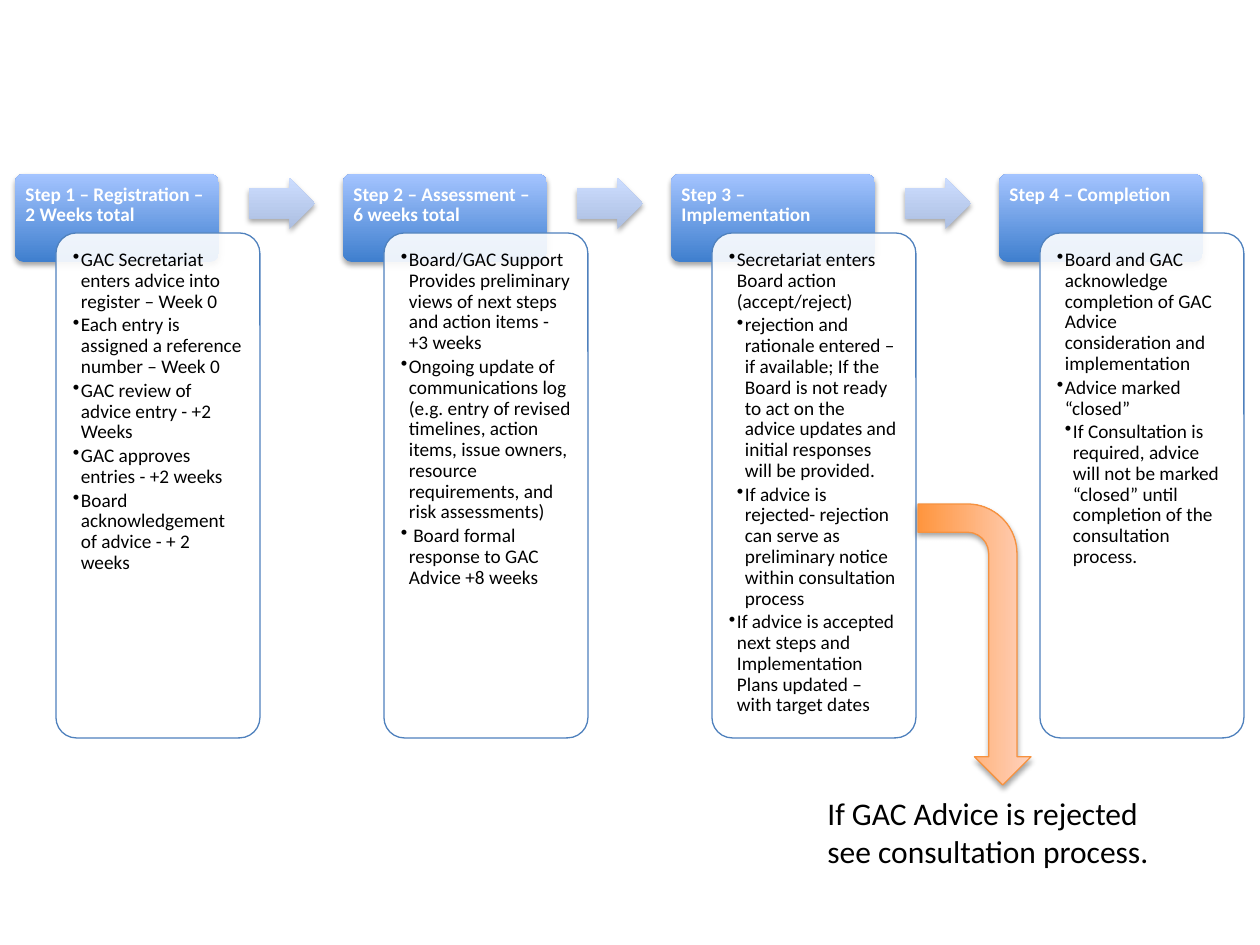
from lxml import etree
from pptx import Presentation
from pptx.dml.color import RGBColor
from pptx.enum.shapes import MSO_SHAPE
from pptx.enum.text import MSO_ANCHOR, PP_ALIGN
from pptx.oxml.ns import qn
from pptx.util import Emu, Pt

ROUNDED = MSO_SHAPE.ROUNDED_RECTANGLE
RIGHT_ARROW = MSO_SHAPE.RIGHT_ARROW
BENT_ARROW = MSO_SHAPE.BENT_ARROW
TOP = MSO_ANCHOR.TOP
LEFT = PP_ALIGN.LEFT

WHITE = RGBColor(0xFF, 0xFF, 0xFF)
BLACK = RGBColor(0x00, 0x00, 0x00)
BLUE_LINE = RGBColor(0x4F, 0x81, 0xBD)
ORANGE_LINE = RGBColor(0xF6, 0x92, 0x40)
HEADER_FILL = (RGBColor(0x3F, 0x7F, 0xCE), RGBColor(0xA4, 0xC4, 0xFF))
ARROW_FILL = (RGBColor(0xAD, 0xBF, 0xE1), RGBColor(0xCC, 0xDD, 0xFF))
ORANGE_FILL = (RGBColor(0xFF, 0x95, 0x3E), RGBColor(0xFF, 0xD2, 0xBD))
FONT = "Calibri"

STEPS = [
    ("Step 1 – Registration – 2 Weeks total", [
        (1, "GAC Secretariat enters advice into register – Week 0"),
        (1, "Each entry is assigned a reference number – Week 0"),
        (1, "GAC review of advice entry - +2 Weeks"),
        (1, "GAC approves entries - +2 weeks"),
        (1, "Board acknowledgement of advice - + 2 weeks"),
    ]),
    ("Step 2 – Assessment – 6 weeks total", [
        (1, "Board/GAC Support Provides preliminary views of next steps and "
            "action items - +3 weeks"),
        (1, "Ongoing update of communications log (e.g. entry of revised "
            "timelines, action items, issue owners, resource requirements, "
            "and risk assessments)"),
        (1, " Board formal response to GAC Advice +8 weeks"),
    ]),
    ("Step 3 – Implementation", [
        (1, "Secretariat enters Board action (accept/reject)"),
        (2, "rejection and rationale entered – if available; If the Board is "
            "not ready to act on the advice updates and initial responses "
            "will be provided."),
        (2, "If advice is rejected- rejection can serve as preliminary notice "
            "within consultation process"),
        (1, "If advice is accepted next steps and Implementation Plans "
            "updated – with target dates"),
    ]),
    ("Step 4 – Completion", [
        (1, "Board and GAC acknowledge completion of GAC Advice consideration "
            "and implementation"),
        (1, "Advice marked “closed”"),
        (2, "If Consultation is required, advice will not be marked “closed” "
            "until completion of the consultation process."),
    ]),
]
NOTE = "If GAC Advice is rejected see consultation process."

SCALE = 914400 / 126
FIRST_LEFT, STEP_PITCH = 15, 328
HEADER_TOP, HEADER_HEIGHT, CARD_WIDTH = 174, 88, 204
BODY_SHIFT, BODY_TOP, BODY_HEIGHT = 41, 233, 505
ARROW_SHIFT, ARROW_TOP, ARROW_WIDTH, ARROW_HEIGHT = 234, 178, 66, 51
BULLET_INDENT = 8


def px(value):
    return Emu(round(value * SCALE))


def add_box(page, kind, bounds, adjustments=()):
    box = page.shapes.add_shape(kind, *map(px, bounds))
    for index, value in enumerate(adjustments):
        box.adjustments[index] = value
    box.shadow.inherit = False
    box.line.fill.background()
    return box


def set_outline(box, color):
    box.line.color.rgb = color
    box.line.width = Pt(0.75)


def set_raised_fill(box, colors):
    box.fill.gradient()
    box.fill.gradient_angle = 90
    for stop, color in zip(box.fill.gradient_stops, colors):
        stop.color.rgb = color
    effects = box.element.spPr.find(qn("a:effectLst"))
    shadow = etree.SubElement(effects, qn("a:outerShdw"), blurRad=str(Pt(3.1)),
                              dist=str(Pt(1.8)), dir="5400000", rotWithShape="0")
    shade = etree.SubElement(shadow, qn("a:srgbClr"), val=str(BLACK))
    etree.SubElement(shade, qn("a:alpha"), val="35000")


def set_translucent_fill(box, color, percent):
    box.fill.solid()
    box.fill.fore_color.rgb = color
    shade = box.element.spPr.find(qn("a:solidFill"))[0]
    etree.SubElement(shade, qn("a:alpha"), val=str(percent * 1000))


def write_text(box, items, size=11, color=BLACK, bold=False, spacing=None,
               after=None, margins=None):
    frame = box.text_frame
    frame.word_wrap = True
    frame.vertical_anchor = TOP
    if margins:
        (frame.margin_left, frame.margin_top,
         frame.margin_right, frame.margin_bottom) = map(px, margins)
    for index, (level, text) in enumerate(items):
        para = frame.add_paragraph() if index else frame.paragraphs[0]
        para.alignment = LEFT
        para.level = level
        para.line_spacing = spacing
        para.space_after = after
        if level:
            properties = para._p.get_or_add_pPr()
            properties.set("marL", str(px(BULLET_INDENT * level)))
            properties.set("indent", str(px(-BULLET_INDENT)))
            etree.SubElement(properties, qn("a:buChar"), char="•")
        span = para.add_run()
        span.text = text
        span.font.name = FONT
        span.font.size = Pt(size)
        span.font.bold = bold
        span.font.color.rgb = color


def add_step(page, left, title, items):
    header = add_box(page, ROUNDED, (left, HEADER_TOP, CARD_WIDTH, HEADER_HEIGHT), [0.1])
    set_raised_fill(header, HEADER_FILL)
    write_text(header, [(0, title)], color=WHITE, bold=True, spacing=0.9,
               margins=(8, 8, 8, 6))
    body = add_box(page, ROUNDED,
                   (left + BODY_SHIFT, BODY_TOP, CARD_WIDTH, BODY_HEIGHT), [0.1])
    set_translucent_fill(body, WHITE, 90)
    set_outline(body, BLUE_LINE)
    write_text(body, items, spacing=0.9, after=Pt(1.7), margins=(11, 11, 11, 11))


def main():
    deck = Presentation()
    deck.slide_width, deck.slide_height = px(1260), px(945)
    page = deck.slides.add_slide(deck.slide_layouts[6])

    for index, (title, items) in enumerate(STEPS):
        left = FIRST_LEFT + index * STEP_PITCH
        add_step(page, left, title, items)
        if index < len(STEPS) - 1:
            arrow = add_box(page, RIGHT_ARROW,
                            (left + ARROW_SHIFT, ARROW_TOP, ARROW_WIDTH, ARROW_HEIGHT),
                            [0.6, 0.5])
            set_raised_fill(arrow, ARROW_FILL)

    turn = add_box(page, BENT_ARROW, (834, 588, 281, 113))
    turn.rotation = 90
    set_raised_fill(turn, ORANGE_FILL)
    set_outline(turn, ORANGE_LINE)

    note = page.shapes.add_textbox(*map(px, (815, 788, 374, 89)))
    write_text(note, [(0, NOTE)], size=18)
    deck.save("out.pptx")


if __name__ == "__main__":
    main()
